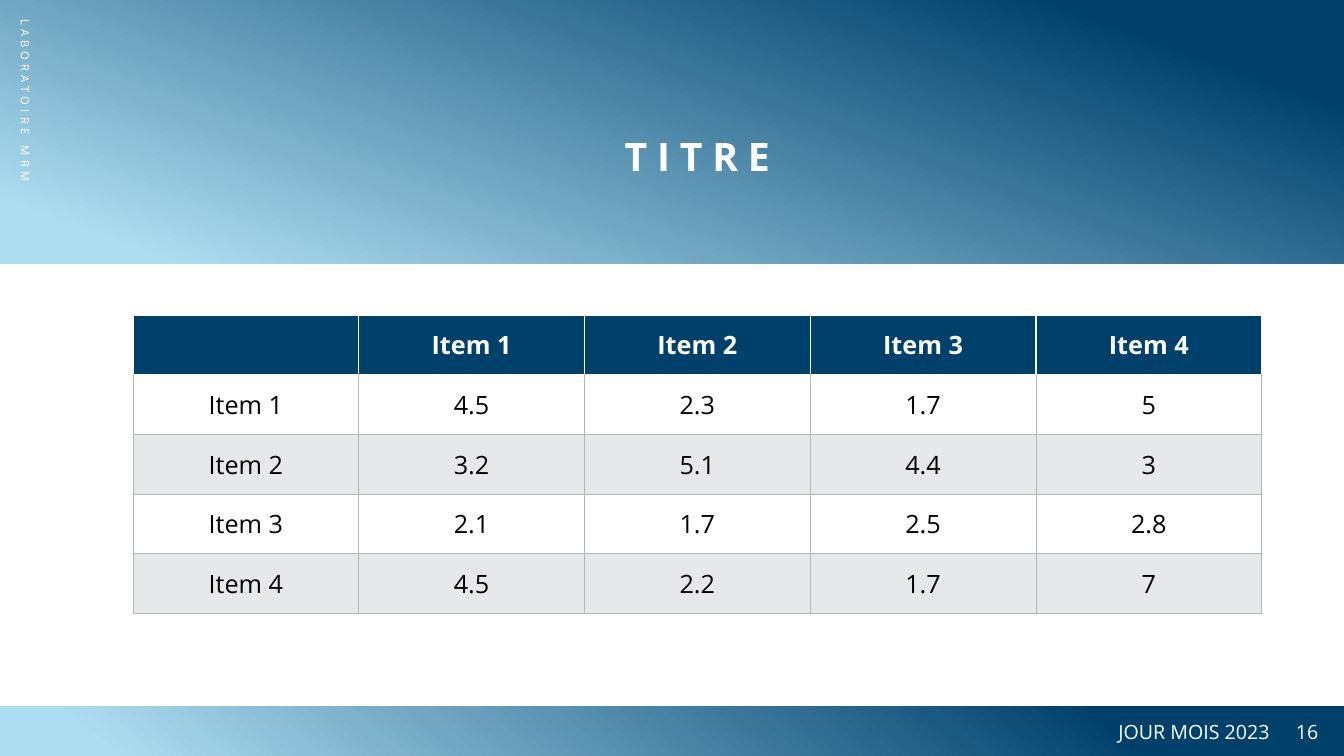
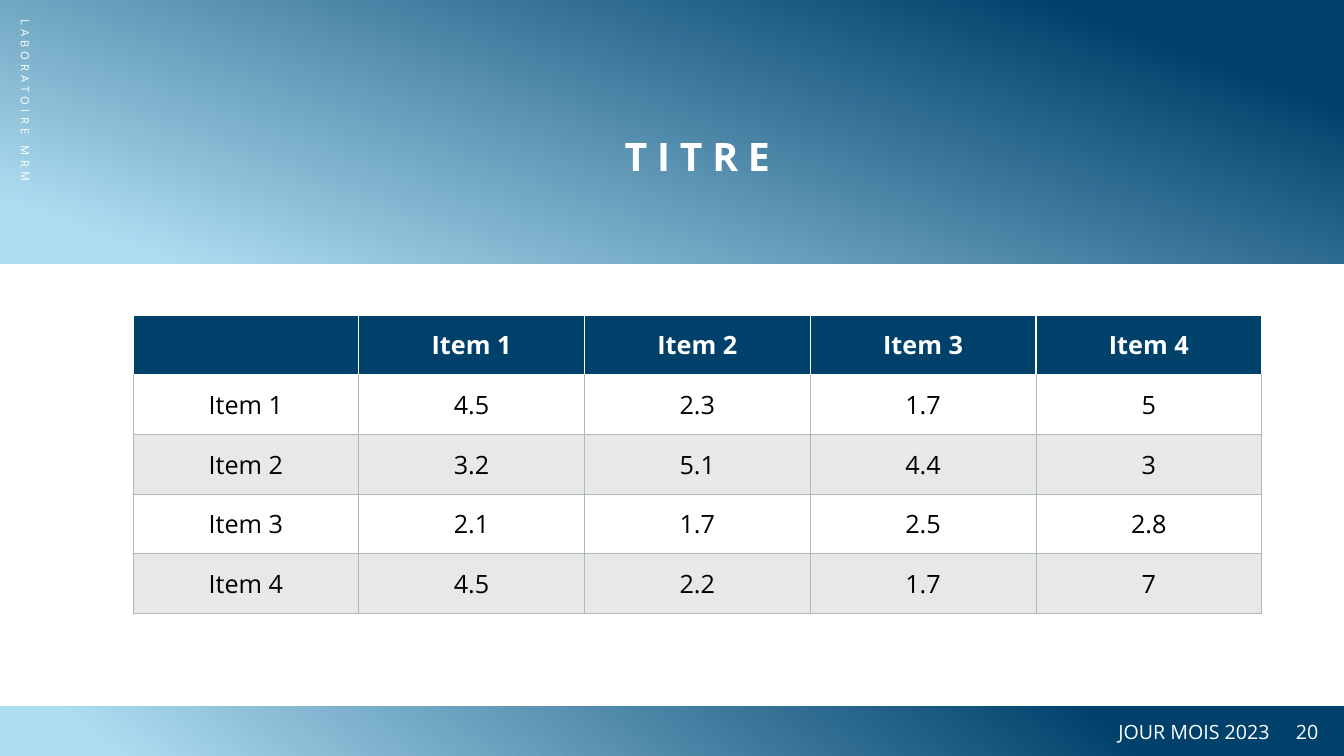
from lxml import etree
from pptx import Presentation
from pptx.dml.color import RGBColor
from pptx.enum.shapes import MSO_SHAPE
from pptx.enum.text import MSO_ANCHOR, PP_ALIGN
from pptx.oxml.ns import qn
from pptx.util import Cm, Pt

RECT = MSO_SHAPE.RECTANGLE
MIDDLE = MSO_ANCHOR.MIDDLE
LEFT, CENTER, RIGHT = PP_ALIGN.LEFT, PP_ALIGN.CENTER, PP_ALIGN.RIGHT

NAVY = RGBColor(0x00, 0x41, 0x6C)
SKY = RGBColor(0xAD, 0xDD, 0xF1)
WHITE = RGBColor(0xFF, 0xFF, 0xFF)
BLACK = RGBColor(0x00, 0x00, 0x00)
PALE = RGBColor(0xE7, 0xE8, 0xE9)
GRAY = RGBColor(0xB2, 0xB8, 0xB8)

FONT = "Open Sans"
WIDTH, HEIGHT = 33.87, 19.05
HEAD_H, FOOT_H = 6.65, 1.25
FOOT_Y = HEIGHT - FOOT_H
BODY_X, BODY_W = 3.35, 28.45
TABLE_Y, ROW_H = 7.95, 1.5

ROWS = [
    ["", "Item 1", "Item 2", "Item 3", "Item 4"],
    ["Item 1", "4.5", "2.3", "1.7", "5"],
    ["Item 2", "3.2", "5.1", "4.4", "3"],
    ["Item 3", "2.1", "1.7", "2.5", "2.8"],
    ["Item 4", "4.5", "2.2", "1.7", "7"],
]
PAGES = [("TITRE", ROWS, 16), ("TITRE", ROWS, 20)]


def style(para, size, color=WHITE, bold=False, align=LEFT):
    para.alignment = align
    font = para.font
    font.name = FONT
    font.size = Pt(size)
    font.bold = bold
    font.color.rgb = color


def add_band(slide, top, height, angle, end):
    band = slide.shapes.add_shape(RECT, 0, Cm(top), Cm(WIDTH), Cm(height))
    band.shadow.inherit = False
    band.line.fill.background()
    band.fill.gradient()
    band.fill.gradient_angle = angle
    stops = zip(band.fill.gradient_stops, (SKY, NAVY), (0.08, end))
    for stop, color, place in stops:
        stop.color.rgb = color
        stop.position = place


def add_text(slide, text, box, size, space=0, inset=None, turn=0, **look):
    shape = slide.shapes.add_textbox(*map(Cm, box))
    shape.rotation = turn
    frame = shape.text_frame
    frame.word_wrap = True
    frame.vertical_anchor = MIDDLE
    if inset is not None:
        frame.margin_left = frame.margin_right = Cm(inset)
        frame.margin_top = frame.margin_bottom = Cm(inset)
    para = frame.paragraphs[0]
    run = para.add_run()
    run.text = text
    if space:
        run._r.get_or_add_rPr().set("spc", str(space * 100))
    style(para, size, **look)


def add_edge(cell, side, color, width):
    props = cell._tc.get_or_add_tcPr()
    line = etree.SubElement(props, qn(f"a:ln{side}"), w=str(Pt(width)))
    fill = etree.SubElement(line, qn("a:solidFill"))
    etree.SubElement(fill, qn("a:srgbClr"), val=str(color))


def fill_cell(cell, text, row):
    head = row == 0
    for side in "LRTB":
        white = head and side != "B"
        if row == 1 and side == "T":
            continue
        add_edge(cell, side, WHITE if white else GRAY, 1 if white else 0.5)
    cell.fill.solid()
    cell.fill.fore_color.rgb = NAVY if head else (WHITE if row % 2 else PALE)
    cell.vertical_anchor = MIDDLE
    cell.text = text
    style(cell.text_frame.paragraphs[0], 18,
          WHITE if head else BLACK, head, CENTER)


def add_grid(slide, rows):
    count = len(rows[0])
    box = (BODY_X, TABLE_Y, BODY_W, ROW_H * len(rows))
    table = slide.shapes.add_table(len(rows), count, *map(Cm, box)).table
    table.horz_banding = False
    for col in table.columns:
        col.width = Cm(BODY_W / count)
    for row, texts in enumerate(rows):
        table.rows[row].height = Cm(ROW_H)
        for col, text in enumerate(texts):
            fill_cell(table.cell(row, col), text, row)


def add_frame(slide, title, page):
    add_band(slide, FOOT_Y, FOOT_H, 50, 0.82)
    add_band(slide, 0, HEAD_H, 70, 0.86)
    add_text(slide, "LABORATOIRE MRM", (-5.08, 5.31, 11.43, 1.27), 8,
             space=3, turn=90)
    add_text(slide, title, (BODY_X, 2.21, BODY_W, 3.43), 28,
             space=7, inset=0, bold=True, align=CENTER)
    add_text(slide, str(page), (32.41, FOOT_Y, 1.19, FOOT_H), 14)
    add_text(slide, "JOUR MOIS 2023", (22.12, FOOT_Y, 10.13, FOOT_H), 14,
             align=RIGHT)


def main():
    deck = Presentation()
    deck.slide_width, deck.slide_height = Cm(WIDTH), Cm(HEIGHT)
    blank = deck.slide_layouts[6]
    for title, rows, page in PAGES:
        slide = deck.slides.add_slide(blank)
        add_frame(slide, title, page)
        add_grid(slide, rows)
    deck.save("out.pptx")


if __name__ == "__main__":
    main()
